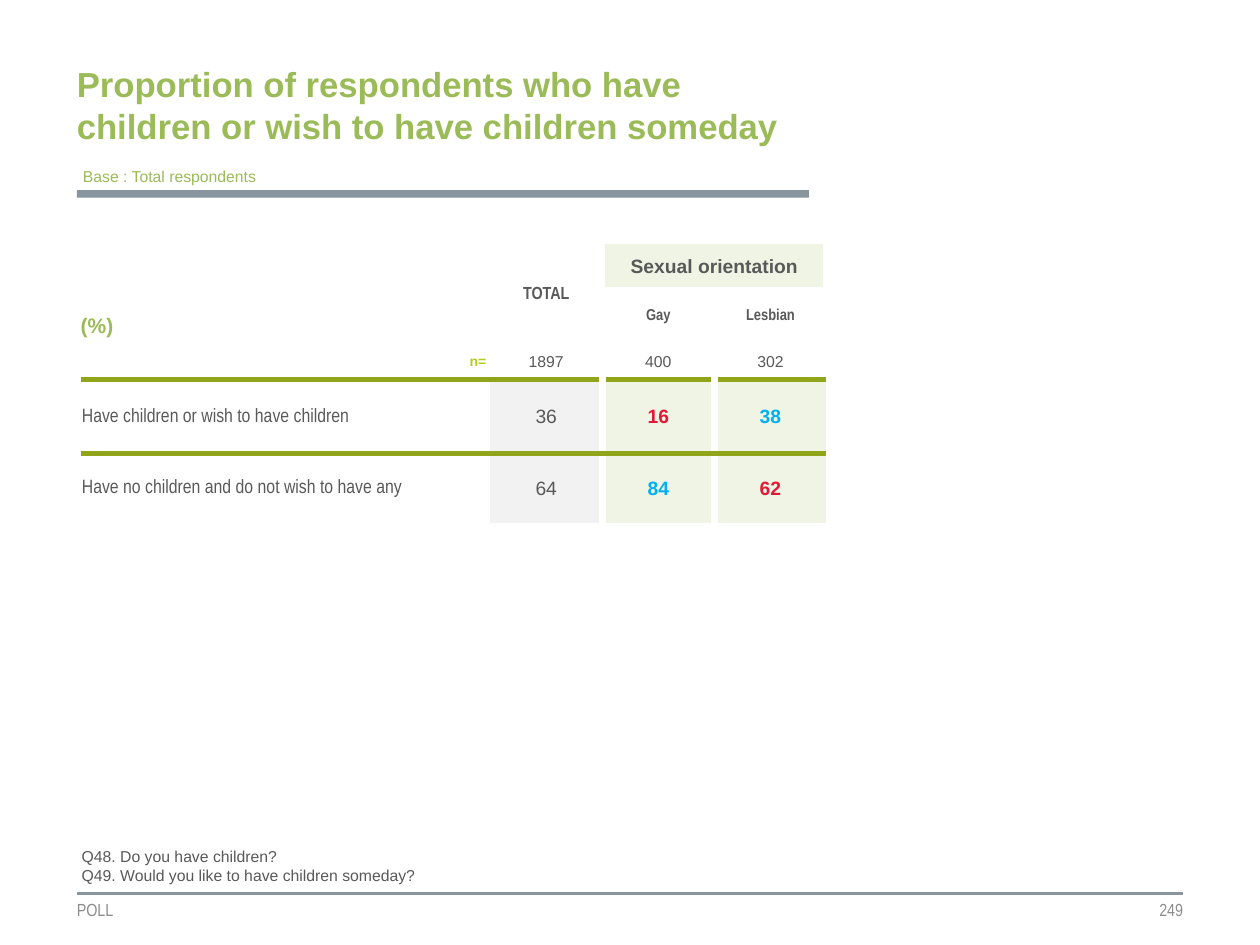
import lxml.etree
import pptx
import pptx.dml.color
import pptx.enum.shapes
import pptx.enum.text
import pptx.oxml.ns
import pptx.util

Inches = pptx.util.Inches
RGBColor = pptx.dml.color.RGBColor
Align = pptx.enum.text.PP_ALIGN
Anchor = pptx.enum.text.MSO_ANCHOR
qn = pptx.oxml.ns.qn

GREEN = RGBColor(0x9B, 0xBB, 0x59)
LIME = RGBColor(0xB5, 0xCC, 0x22)
OLIVE = RGBColor(0x91, 0xA5, 0x1B)
PALE_GREEN = RGBColor(0xEF, 0xF4, 0xE4)
PALE_GRAY = RGBColor(0xF2, 0xF2, 0xF2)
SLATE = RGBColor(0x88, 0x95, 0x9E)
GRAY = RGBColor(0x8C, 0x8C, 0x8C)
DARK = RGBColor(0x59, 0x59, 0x59)
RED = RGBColor(0xE3, 0x18, 0x36)
BLUE = RGBColor(0x00, 0xB0, 0xF0)
WHITE = RGBColor(0xFF, 0xFF, 0xFF)

SANS, NARROW = "Arial", "Arial Narrow"
NO_TABLE_STYLE = "{2D5ABB26-0587-4C30-8999-92F81FD0307C}"
COLUMN_WIDTHS = [3.25, 0.89, 0.89, 0.89]
ROW_HEIGHTS = [0.34, 0.45, 0.28, 0.59, 0.55]
SAMPLE_SIZES = ["1897", "400", "302"]
# Label, then (value, colour) for total, gay and lesbian
RESULTS = [
    ("Have children or wish to have children", [("36", DARK), ("16", RED), ("38", BLUE)]),
    ("Have no children and do not wish to have any", [("64", DARK), ("84", BLUE), ("62", RED)]),
]


def write_text(text_frame, text, size, color, font=SANS, bold=False, align=Align.LEFT):
    text_frame.text = text
    for paragraph in text_frame.paragraphs:
        paragraph.alignment = align
        for run in paragraph.runs:
            run.font.name = font
            run.font.size = pptx.util.Pt(size)
            run.font.bold = bold
            run.font.color.rgb = color


def set_margins(target, left, top, right, bottom):
    target.margin_left, target.margin_top = Inches(left), Inches(top)
    target.margin_right, target.margin_bottom = Inches(right), Inches(bottom)


def place(shape, left, top, width, height):
    shape.left, shape.top = Inches(left), Inches(top)
    shape.width, shape.height = Inches(width), Inches(height)


def add_title(slide, text):
    title = slide.shapes.title
    place(title, 0.61, 0.62, 5.73, 0.69)
    frame = title.text_frame
    frame.word_wrap = True
    frame.auto_size = pptx.enum.text.MSO_AUTO_SIZE.NONE
    frame.vertical_anchor = Anchor.MIDDLE
    set_margins(frame, 0, 0, 0, 0.27)
    write_text(frame, text, 19.8, GREEN, bold=True)


def add_text(slide, box, text, size, color, wrap=True, **style):
    frame = slide.shapes.add_textbox(*map(Inches, box)).text_frame
    frame.word_wrap = wrap
    write_text(frame, text, size, color, **style)
    return frame


def add_footer_text(slide, box, text, align):
    frame = add_text(slide, box, text, 10, GRAY, font=NARROW, align=align)
    frame.vertical_anchor = Anchor.MIDDLE
    set_margins(frame, 0, 0, 0, 0)


def add_rules(slide):
    bar = slide.shapes.add_shape(
        pptx.enum.shapes.MSO_SHAPE.RECTANGLE, *map(Inches, (0.61, 1.51, 5.81, 0.06)))
    bar.shadow.inherit = False
    bar.fill.solid()
    bar.fill.fore_color.rgb = SLATE
    bar.line.fill.background()

    line = slide.shapes.add_connector(
        pptx.enum.shapes.MSO_CONNECTOR.STRAIGHT, *map(Inches, (0.61, 7.09, 9.39, 7.09)))
    line.line.color.rgb = SLATE
    line.line.width = pptx.util.Pt(1.5)
    lxml.etree.SubElement(line._element.spPr, qn("a:effectLst"))


def set_borders(cell, **borders):
    """Borders are (colour, points), given in the order L, R, T, B."""
    properties = cell._tc.get_or_add_tcPr()
    for side, (color, points) in borders.items():
        line = lxml.etree.SubElement(
            properties, qn("a:ln" + side), w=str(pptx.util.Pt(points)))
        fill = lxml.etree.SubElement(line, qn("a:solidFill"))
        lxml.etree.SubElement(fill, qn("a:srgbClr"), val=str(color))


def fill_cell(cell, color):
    cell.fill.solid()
    cell.fill.fore_color.rgb = color


def write_cell(cell, text, size, color, align=Align.CENTER, **style):
    write_text(cell.text_frame, text, size, color, align=align, **style)


def add_empty_table(slide):
    frame = slide.shapes.add_table(
        len(ROW_HEIGHTS), len(COLUMN_WIDTHS), Inches(0.64), Inches(1.94),
        Inches(sum(COLUMN_WIDTHS)), Inches(sum(ROW_HEIGHTS)))
    table = frame.table
    table.first_row = table.horz_banding = False
    table._tbl.tblPr.find(qn("a:tableStyleId")).text = NO_TABLE_STYLE
    for column, width in zip(table.columns, COLUMN_WIDTHS):
        column.width = Inches(width)
    for row, height in zip(table.rows, ROW_HEIGHTS):
        row.height = Inches(height)
    for cell in table.iter_cells():
        cell.vertical_anchor = Anchor.MIDDLE
        set_margins(cell, 0.01, 0.01, 0.01, 0)
    return table


def write_header(table):
    table.cell(0, 1).merge(table.cell(1, 1))
    table.cell(0, 2).merge(table.cell(0, 3))
    write_cell(table.cell(0, 1), "TOTAL", 10, DARK, font=NARROW, bold=True)

    group = table.cell(0, 2)
    write_cell(group, "Sexual orientation", 11, DARK, bold=True)
    set_borders(group, L=(WHITE, 3), R=(WHITE, 4.5))
    fill_cell(group, PALE_GREEN)

    unit = table.cell(1, 0)
    write_cell(unit, "(%)", 12, GREEN, align=Align.LEFT, bold=True)
    unit.vertical_anchor = Anchor.BOTTOM
    set_margins(unit, 0, 0.05, 0, 0.05)
    for column, name in enumerate(["Gay", "Lesbian"], start=2):
        write_cell(table.cell(1, column), name, 9, DARK, font=NARROW, bold=True)

    # Sample sizes above the olive rule
    base = table.cell(2, 0)
    write_cell(base, "n=", 8, LIME, align=Align.RIGHT, bold=True)
    set_margins(base, 0, 0.05, 0.03, 0.05)
    for column, count in enumerate(SAMPLE_SIZES, start=1):
        write_cell(table.cell(2, column), count, 9, DARK)
    for column in range(len(COLUMN_WIDTHS)):
        set_borders(table.cell(2, column), B=(OLIVE, 3))


def write_results(table):
    for row, (label, values) in enumerate(RESULTS, start=3):
        rule = {"T": (OLIVE, 3)} if row == 3 else {}
        label_cell = table.cell(row, 0)
        write_cell(label_cell, label, 11, DARK, align=Align.LEFT, font=NARROW)
        set_borders(label_cell, **rule)
        for column, (value, color) in enumerate(values, start=1):
            cell = table.cell(row, column)
            is_total = column == 1
            write_cell(cell, value, 11, color, bold=not is_total)
            gap = {1: {"R": (WHITE, 4.5)}, 2: {"L": (WHITE, 4.5)}}.get(column, {})
            set_borders(cell, **gap, **rule)
            fill_cell(cell, PALE_GRAY if is_total else PALE_GREEN)


def main():
    presentation = pptx.Presentation()
    presentation.slide_width, presentation.slide_height = Inches(10), Inches(7.5)
    slide = presentation.slides.add_slide(presentation.slide_layouts[5])

    # Heading
    add_rules(slide)
    add_title(slide, "Proportion of respondents who have children "
                     "or wish to have children someday")
    add_text(slide, (0.56, 1.27, 1.6, 0.25), "Base : Total respondents", 9, GREEN, wrap=False)

    # Results table
    table = add_empty_table(slide)
    write_header(table)
    write_results(table)

    # Questions and footer
    add_text(slide, (0.55, 6.67, 8.55, 0.4),
             "Q48. Do you have children?\nQ49. Would you like to have children someday?", 9, DARK)
    add_footer_text(slide, (0.61, 7.09, 2.8, 0.26), "POLL", Align.LEFT)
    add_footer_text(slide, (6.55, 7.09, 2.84, 0.26), "249", Align.RIGHT)

    presentation.save("out.pptx")


if __name__ == "__main__":
    main()
